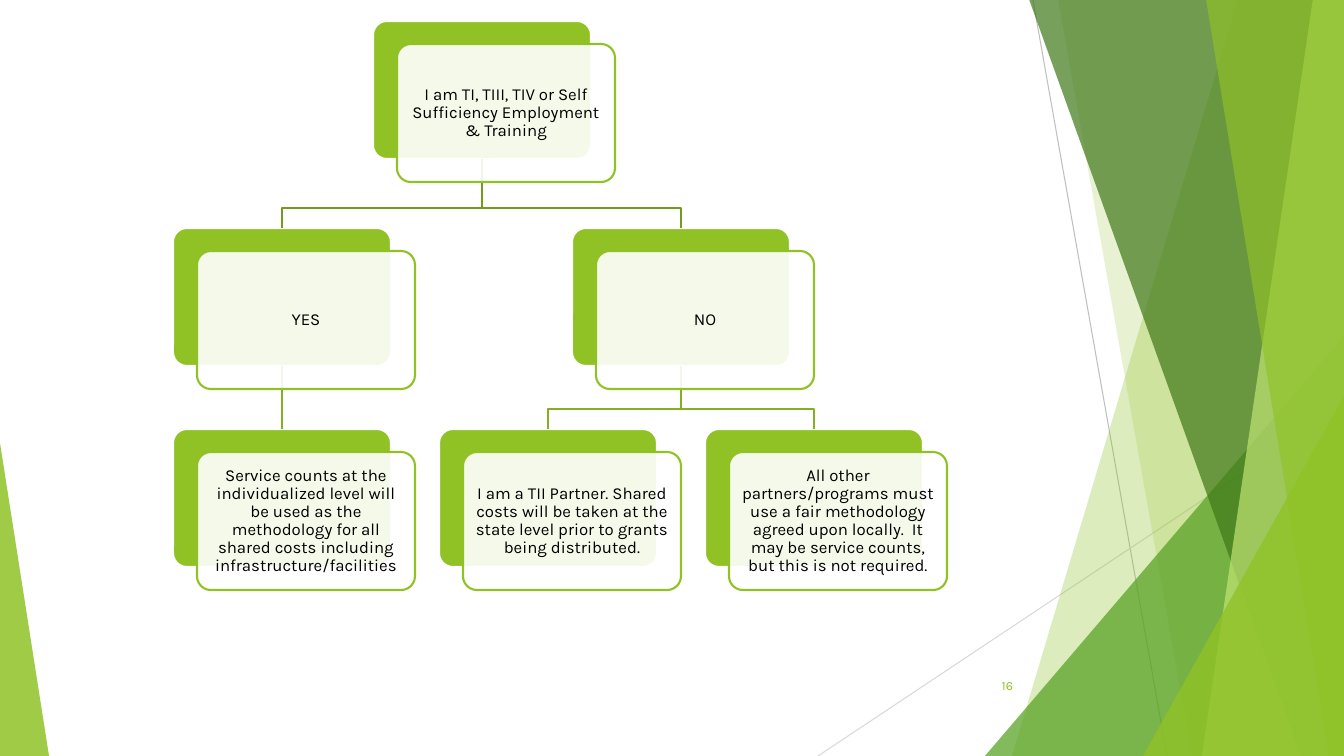
from lxml.etree import SubElement
from pptx import Presentation
from pptx.dml.color import RGBColor
from pptx.enum.shapes import MSO_CONNECTOR, MSO_SHAPE
from pptx.enum.text import MSO_ANCHOR, PP_ALIGN
from pptx.oxml.ns import qn
from pptx.util import Emu, Pt

SCALE = 914400 / 100.8
WIDTH, HEIGHT = 1344, 756
COLORS = {
    "lime": "90C226", "green": "54A021", "forest": "3F7819", "pale": "C0E474",
    "white": "FFFFFF", "black": "000000", "gray": "BFBFBF", "light_gray": "D9D9D9",
    "upper_link": "739B1E", "lower_link": "83B022",
}

CARD_W, CARD_H = 218, 138
SHIFT_X, SHIFT_Y = 24, 23
BEND = 20  # height of the horizontal run above a child card
LEVELS = [21, 228, 429]
# name: (left, level, text)
CARDS = {
    "start": (373, 0, "I am TI, TIII, TIV or Self Sufficiency Employment & Training"),
    "yes": (173, 1, "YES"),
    "no": (572, 1, "NO"),
    "counts": (173, 2, "Service counts at the individualized level will be used as the "
                       "methodology for all shared costs including infrastructure/facilities"),
    "partner": (439, 2, "I am a TII Partner. Shared costs will be taken at the state level "
                        "prior to grants being distributed."),
    "others": (705, 2, "All other partners/programs must use a fair methodology agreed upon "
                       "locally.  It may be service counts, but this is not required."),
}
LINKS = [("no", "others"), ("no", "partner"), ("start", "no"),
         ("yes", "counts"), ("start", "yes")]


def px(value):
    return Emu(round(value * SCALE))


class Painter:
    font = "Karla"
    line_width = 1.5

    def __init__(self, page):
        self.page = page

    def paint(self, shape, fill=None, alpha=100, line=None):
        """Set fill, opacity in percent and outline of a shape."""
        shape.shadow.inherit = False
        if fill:
            shape.fill.solid()
            shape.fill.fore_color.rgb = RGBColor.from_string(COLORS[fill])
            if alpha < 100:
                color = shape._element.spPr.find(qn("a:solidFill")).find(qn("a:srgbClr"))
                SubElement(color, qn("a:alpha"), val=str(alpha * 1000))
        else:
            shape.fill.background()
        if line:
            self.stroke(shape.line, line, self.line_width)
        else:
            shape.line.fill.background()
        return shape

    def stroke(self, line, color, width):
        line.color.rgb = RGBColor.from_string(COLORS[color])
        line.width = Pt(width)

    def preset(self, kind, left, top, width, height, adjust, **style):
        shape = self.page.shapes.add_shape(kind, px(left), px(top), px(width), px(height))
        shape.adjustments[0] = adjust
        return self.paint(shape, **style)

    def outline(self, points, close=True, **style):
        builder = self.page.shapes.build_freeform(*points[0], scale=SCALE)
        builder.add_line_segments(points[1:], close=close)
        return self.paint(builder.convert_to_shape(), **style)

    def connector(self, start, end, color, width):
        line = self.page.shapes.add_connector(
            MSO_CONNECTOR.STRAIGHT, px(start[0]), px(start[1]), px(end[0]), px(end[1]))
        self.stroke(line.line, color, width)
        SubElement(line._element.spPr, qn("a:effectLst"))
        return line

    def set_text(self, shape, text, size=12, color="black", align=PP_ALIGN.CENTER,
                 spacing=None, inset=None):
        frame = shape.text_frame
        frame.word_wrap = True
        frame.vertical_anchor = MSO_ANCHOR.MIDDLE
        if inset is not None:
            frame.margin_left = frame.margin_right = px(inset)
            frame.margin_top = frame.margin_bottom = px(inset)
        para = frame.paragraphs[0]
        para.alignment = align
        para.line_spacing = spacing
        span = para.add_run()
        span.text = text
        span.font.name = self.font
        span.font.size = Pt(size)
        span.font.color.rgb = RGBColor.from_string(COLORS[color])

    def text(self, left, top, width, height, text, **style):
        box = self.page.shapes.add_textbox(px(left), px(top), px(width), px(height))
        self.set_text(box, text, **style)

    def card(self, left, top, **style):
        return self.preset(MSO_SHAPE.ROUNDED_RECTANGLE, left, top, CARD_W, CARD_H, 0.1, **style)


def draw_backdrop(painter):
    def facet(top_x, bottom_x, fill, alpha):
        """Panel that reaches the right edge, with a slanted left side."""
        painter.outline([(top_x, -1), (WIDTH, -1), (WIDTH, HEIGHT), (bottom_x, HEIGHT)],
                        fill=fill, alpha=alpha)

    def corner(left, top, width, apex, fill, alpha):
        """Right triangle standing on the bottom edge."""
        painter.preset(MSO_SHAPE.ISOSCELES_TRIANGLE, left, top, width, HEIGHT - top, apex,
                       fill=fill, alpha=alpha)

    painter.connector((1033, 0), (1167, HEIGHT), "gray", 0.75)
    painter.connector((WIDTH, 406), (818, HEIGHT), "light_gray", 0.75)
    facet(1238, 1012, "lime", 30)
    facet(1058, 1192, "lime", 20)
    corner(985, 336, 359, 1, "green", 72)
    facet(1029, 1301, "forest", 70)
    facet(1313, 1202, "pale", 70)
    facet(1206, 1329, "lime", 65)
    corner(1143, 396, 201, 1, "lime", 80)
    corner(0, 443, 49, 0, "lime", 85)


def draw_tree(painter):
    backs = {name: painter.card(left, LEVELS[level], fill="lime", line="white")
             for name, (left, level, _) in CARDS.items()}

    for parent, child in LINKS:
        parent_left, parent_level, _ = CARDS[parent]
        child_left, child_level, _ = CARDS[child]
        start = (parent_left + CARD_W // 2, LEVELS[parent_level] + CARD_H)
        end = (child_left + CARD_W // 2, LEVELS[child_level])
        color = "lower_link" if parent_level else "upper_link"
        if start[0] == end[0]:
            line = painter.connector(start, end, color, painter.line_width)
            line.begin_connect(backs[parent], 2)
            line.end_connect(backs[child], 0)
        else:
            bend_y = end[1] - BEND
            painter.outline([start, (start[0], bend_y), (end[0], bend_y), end],
                            close=False, line=color)

    for left, level, text in CARDS.values():
        front = painter.card(left + SHIFT_X, LEVELS[level] + SHIFT_Y,
                             fill="white", alpha=90, line="lime")
        painter.set_text(front, text, spacing=0.9, inset=5)


def main():
    deck = Presentation()
    deck.slide_width, deck.slide_height = px(WIDTH), px(HEIGHT)
    painter = Painter(deck.slides.add_slide(deck.slide_layouts[6]))
    draw_backdrop(painter)
    draw_tree(painter)
    painter.text(947, 666, 76, 40, "16", size=9, color="lime", align=PP_ALIGN.RIGHT)
    deck.save("out.pptx")


if __name__ == "__main__":
    main()
